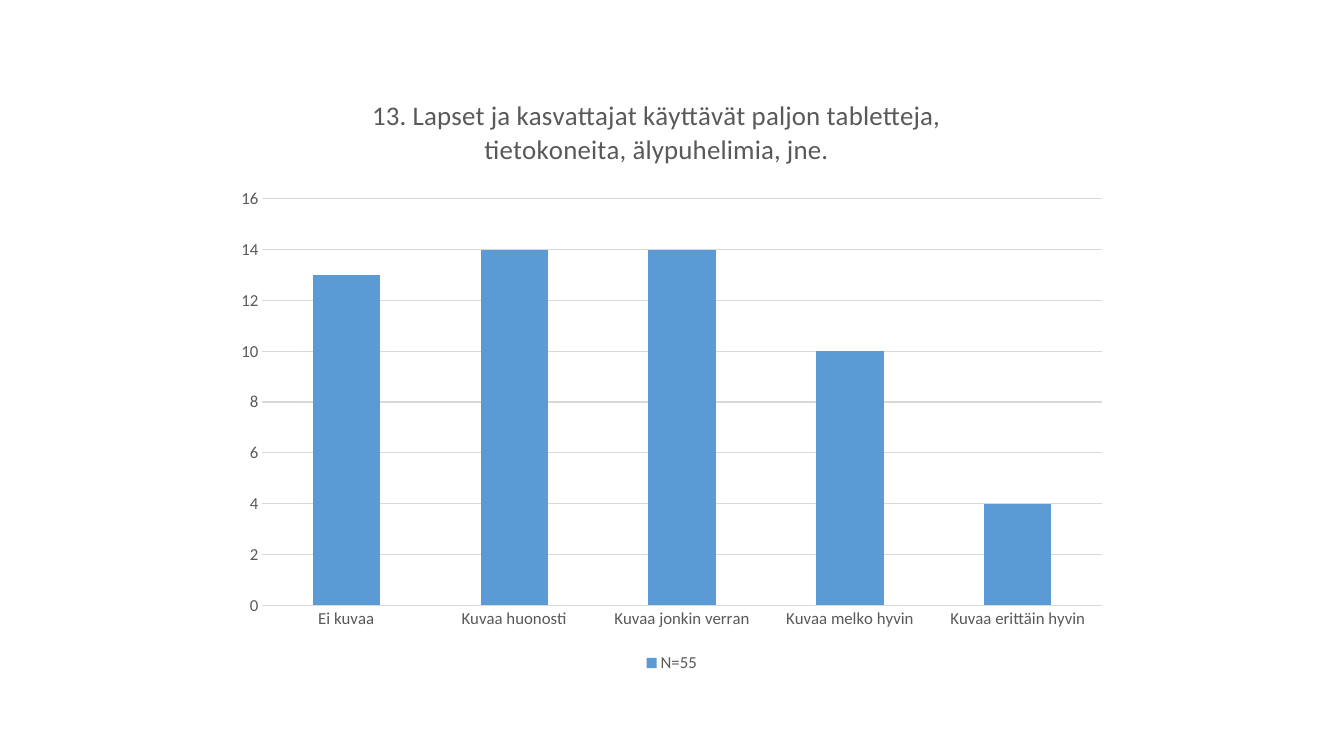
from lxml import etree
from pptx import Presentation
from pptx.chart.data import CategoryChartData
from pptx.dml.color import RGBColor
from pptx.enum.chart import XL_CHART_TYPE, XL_LEGEND_POSITION, XL_TICK_MARK
from pptx.oxml.ns import qn
from pptx.util import Cm, Pt

STACKED = XL_CHART_TYPE.COLUMN_STACKED
BOTTOM = XL_LEGEND_POSITION.BOTTOM
NO_TICK = XL_TICK_MARK.NONE

BLUE = RGBColor(0x5B, 0x9B, 0xD5)
GREY_TEXT = RGBColor(0x59, 0x59, 0x59)
GREY_LINE = RGBColor(0xD9, 0xD9, 0xD9)
FONT = "Calibri"

TITLE = ("13. Lapset ja kasvattajat käyttävät paljon tabletteja, tietokoneita, "
         "älypuhelimia, jne.")
ANSWERS = {
    "Ei kuvaa": 13,
    "Kuvaa huonosti": 14,
    "Kuvaa jonkin verran": 14,
    "Kuvaa melko hyvin": 10,
    "Kuvaa erittäin hyvin": 4,
}


def style_font(font, size):
    font.name = FONT
    font.size = Pt(size)
    font.bold = False
    font.color.rgb = GREY_TEXT


def style_line(line):
    line.color.rgb = GREY_LINE
    line.width = Pt(0.75)


def set_layout(element, **settings):
    """Fix an element's place, in fractions of the chart's size."""
    layout = element.find(qn("c:layout"))
    if layout is None:
        layout = etree.Element(qn("c:layout"))
        text = element.find(qn("c:tx"))
        if text is None:
            element.insert(0, layout)
        else:
            text.addnext(layout)
    manual = etree.SubElement(layout, qn("c:manualLayout"))
    for name, value in settings.items():
        etree.SubElement(manual, qn(f"c:{name}")).set("val", str(value))


def add_title(chart):
    chart.has_title = True
    title = chart.chart_title
    title.include_in_layout = False
    tf = title.text_frame
    tf.text = TITLE
    style_font(tf.paragraphs[0].runs[0].font, 19.2)
    set_layout(title._element, xMode="edge", yMode="edge", x=0.16, y=0.02)


def style_axes(chart):
    for axis in (chart.category_axis, chart.value_axis):
        axis.major_tick_mark = axis.minor_tick_mark = NO_TICK
        style_font(axis.tick_labels.font, 12)
    style_line(chart.category_axis.format.line)
    values = chart.value_axis
    values.format.line.fill.background()
    values.minimum_scale, values.maximum_scale, values.major_unit = 0, 16, 2
    style_line(values.major_gridlines.format.line)


def add_legend(chart):
    chart.has_legend = True
    chart.legend.position = BOTTOM
    chart.legend.include_in_layout = False
    style_font(chart.legend.font, 12)


def add_answer_chart(s):
    data = CategoryChartData()
    data.categories = list(ANSWERS)
    data.add_series("N=55", list(ANSWERS.values()))
    chart = s.shapes.add_chart(
        STACKED, Cm(5.64), Cm(2), Cm(22.58), Cm(15.06), data).chart
    style_font(chart.font, 10)
    plot = chart.plots[0]
    plot.vary_by_categories = False
    plot.gap_width = 150
    plot.overlap = 100
    fill = plot.series[0].format.fill
    fill.solid()
    fill.fore_color.rgb = BLUE
    add_title(chart)
    style_axes(chart)
    add_legend(chart)
    set_layout(chart._chartSpace.chart.plotArea, layoutTarget="inner",
               xMode="edge", yMode="edge", x=0.043, y=0.2, w=0.937, h=0.68)


def main():
    prs = Presentation()
    prs.slide_width, prs.slide_height = Cm(33.87), Cm(19.05)
    s = prs.slides.add_slide(prs.slide_layouts[6])
    add_answer_chart(s)
    prs.save("out.pptx")


if __name__ == "__main__":
    main()
